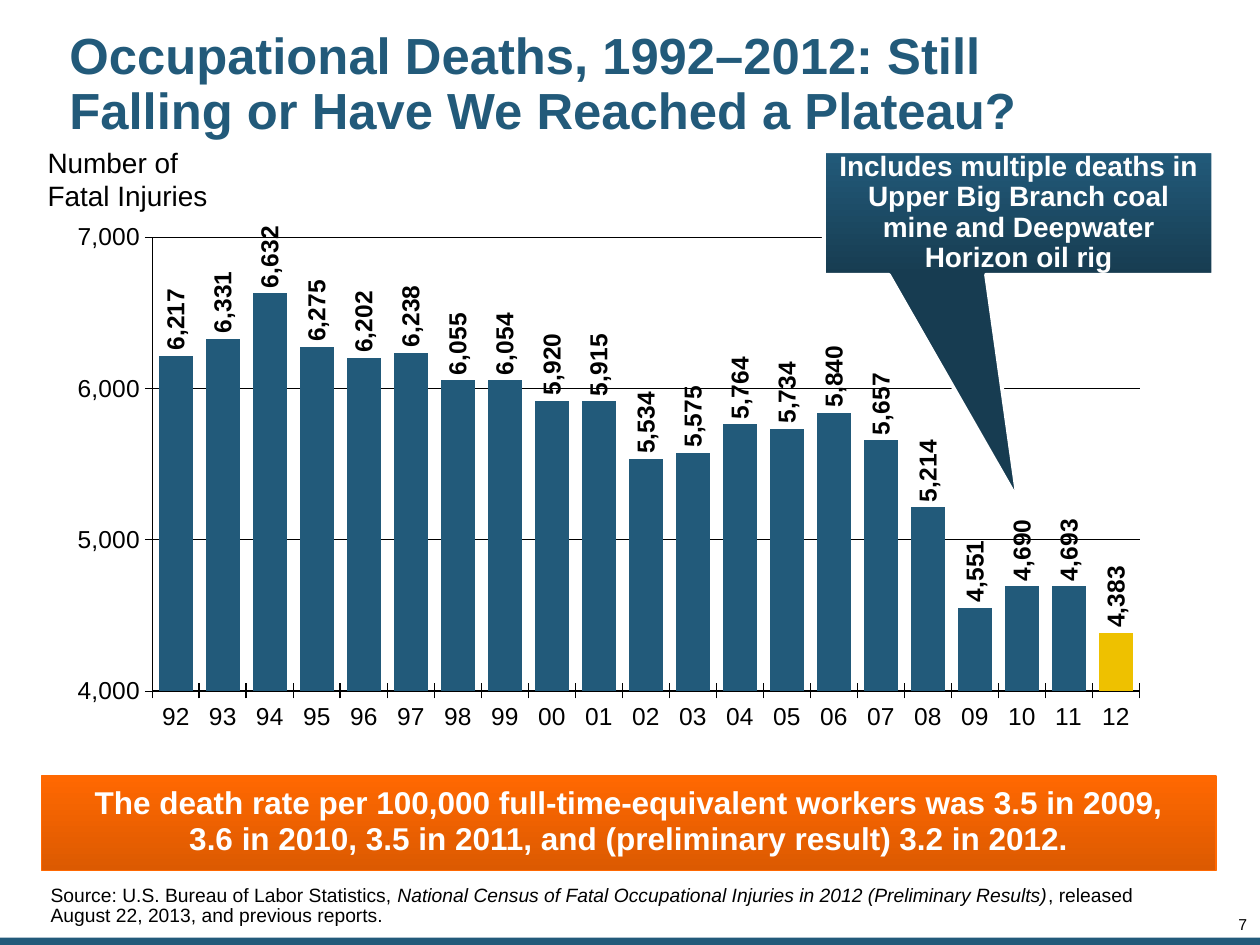
from lxml import etree
from pptx import Presentation, util as u
from pptx.chart.data import CategoryChartData
from pptx.dml.color import RGBColor
from pptx.enum import chart as charts, shapes, text
from pptx.oxml import ns

COLOURS = {
    "blue": "225A7A",
    "navy": "173C51",
    "orange": "FF6801",
    "rust": "DC5A01",
    "gold": "EEC100",
    "black": "000000",
    "white": "FFFFFF",
}
DEATHS = [6217, 6331, 6632, 6275, 6202, 6238, 6055, 6054, 5920, 5915, 5534,
          5575, 5764, 5734, 5840, 5657, 5214, 4551, 4690, 4693, 4383]
PLOT_AREA = {"x": 0.083, "y": 0.097, "w": 0.917, "h": 0.786}
CENTRE = text.PP_ALIGN.CENTER
MIDDLE = text.MSO_ANCHOR.MIDDLE
BOTTOM = text.MSO_ANCHOR.BOTTOM


def colour(name):
    """Return the named colour."""
    return RGBColor.from_string(COLOURS[name])


def lengths(*values):
    """Turn centimetres into lengths."""
    return [u.Cm(value) for value in values]


def set_values(target, values):
    """Set each attribute of the target from a dict."""
    for name, value in values.items():
        setattr(target, name, value)


def format_font(font, size, name="black", **values):
    """Apply the slide's typeface with a size, colour and style."""
    set_values(font, {"name": "Arial", "size": u.Pt(size), **values})
    font.color.rgb = colour(name)


def write(shape, lines, size, name="black", bold=False, margins=(0.25, 0.13, 0.25, 0.13),
          anchor=text.MSO_ANCHOR.TOP, **paragraph_values):
    """Fill a shape with lines of (wording, italic) runs in one paragraph."""
    frame = shape.text_frame
    sides = ("margin_left", "margin_top", "margin_right", "margin_bottom")
    set_values(frame, dict(zip(sides, lengths(*margins))))
    set_values(frame, {"word_wrap": True, "vertical_anchor": anchor,
                       "auto_size": text.MSO_AUTO_SIZE.NONE})
    paragraph = frame.paragraphs[0]
    set_values(paragraph, {"space_before": u.Pt(0), **paragraph_values})
    for index, line in enumerate(lines):
        if index:
            paragraph.add_line_break()
        for wording, italic in line:
            run = paragraph.add_run()
            run.text = wording
            format_font(run.font, size, name, bold=bold, italic=italic)


def add_panel(slide, box, kind, start, end, line, width):
    """Add a shape shaded downwards from one colour to another."""
    shape = slide.shapes.add_shape(kind, *lengths(*box))
    shape.shadow.inherit = False
    shape.fill.gradient()
    shape.fill.gradient_angle = 270
    for stop, name in zip(shape.fill.gradient_stops, (start, end)):
        stop.color.rgb = colour(name)
    shape.line.color.rgb = colour(line)
    shape.line.width = u.Pt(width)
    return shape


def add_title(slide, box):
    """Place the title placeholder and write the headline."""
    title = slide.shapes.title
    set_values(title, dict(zip(("left", "top", "width", "height"), lengths(*box))))
    wording = "Occupational Deaths, 1992–2012: Still Falling or Have We Reached a Plateau?"
    write(title, [[(wording, False)]], 29, "blue", True, (0.13,) * 4, MIDDLE,
          line_spacing=0.9, alignment=text.PP_ALIGN.LEFT)


def format_axis(axis, width):
    """Give an axis its text, line and crossing tick marks."""
    format_font(axis.tick_labels.font, 14, bold=False)
    axis.format.line.color.rgb = colour("black")
    axis.format.line.width = u.Pt(width)
    axis.major_tick_mark = charts.XL_TICK_MARK.CROSS


def set_plot_area(chart):
    """Fix the inner plot area as fractions of the chart."""
    area = chart.element.xpath("c:chart/c:plotArea")[0]
    for old in area.xpath("c:layout"):
        area.remove(old)
    layout = etree.Element(ns.qn("c:layout"))
    manual = etree.SubElement(layout, ns.qn("c:manualLayout"))
    settings = {"layoutTarget": "inner", "xMode": "edge", "yMode": "edge", **PLOT_AREA}
    for name, value in settings.items():
        etree.SubElement(manual, ns.qn(f"c:{name}")).set("val", str(value))
    area.insert(0, layout)


def add_deaths_chart(slide, box):
    """Add the column chart of yearly deaths with its axis heading."""
    data = CategoryChartData(number_format="#,##0")
    data.categories = [f"{year % 100:02d}" for year in range(1992, 2013)]
    data.add_series("Series 1", DEATHS)
    chart = slide.shapes.add_chart(
        charts.XL_CHART_TYPE.COLUMN_CLUSTERED, *lengths(*box), data).chart
    set_values(chart, {"has_legend": False, "has_title": False})
    format_font(chart.font, 14)
    set_plot_area(chart)
    set_values(chart.plots[0], {"gap_width": 40, "vary_by_categories": False})

    format_axis(chart.category_axis, 1)
    chart.category_axis.tick_label_position = charts.XL_TICK_LABEL_POSITION.LOW
    values = chart.value_axis
    format_axis(values, 0.25)
    set_values(values, {"minimum_scale": 4000, "maximum_scale": 7000, "major_unit": 1000})
    set_values(values.tick_labels,
               {"number_format": "#,##0", "number_format_is_linked": False})
    values.major_gridlines.format.line.color.rgb = colour("black")
    values.major_gridlines.format.line.width = u.Pt(0.25)

    series = chart.plots[0].series[0]
    last_column = series.points[len(DEATHS) - 1]
    for part, name in ((series, "blue"), (last_column, "gold")):
        part.format.fill.solid()
        part.format.fill.fore_color.rgb = colour(name)
    labels = series.data_labels
    set_values(labels, {"show_value": True, "number_format": "#,##0",
                        "number_format_is_linked": False,
                        "position": charts.XL_LABEL_POSITION.OUTSIDE_END})
    format_font(labels.font, 14, bold=True)
    body = labels._element.xpath("c:txPr/a:bodyPr")[0]
    body.set("rot", "-5400000")
    body.set("vert", "horz")

    left, top = box[:2]
    heading = slide.shapes.add_textbox(*lengths(left - 0.56, top - 0.86, 4.27, 1.63))
    write(heading, [[("Number of Fatal Injuries", False)]], 16)


def add_callout(slide, box):
    """Add the callout that points at the 2010 column."""
    callout = add_panel(slide, box, shapes.MSO_SHAPE.RECTANGULAR_CALLOUT,
                        "blue", "navy", "white", 2.25)
    callout.adjustments[0] = -0.002
    callout.adjustments[1] = 2.326
    wording = "Includes multiple deaths in Upper Big Branch coal mine and Deepwater Horizon oil rig"
    write(callout, [[(wording, False)]], 16, "white", True, (0.25,) * 4, MIDDLE,
          line_spacing=0.9, alignment=CENTRE)


def add_rate_banner(slide, box):
    """Add the orange banner with the death rates."""
    banner = add_panel(slide, box, shapes.MSO_SHAPE.RECTANGLE,
                       "orange", "rust", "orange", 1)
    lines = ["The death rate per 100,000 full-time-equivalent workers was 3.5 in 2009,",
             "3.6 in 2010, 3.5 in 2011, and (preliminary result) 3.2 in 2012."]
    write(banner, [[(line, False)] for line in lines], 18, "white", True,
          (0.25, 0.13, 0.25, 0.18), MIDDLE, line_spacing=0.95, alignment=CENTRE)


def add_footer(slide, box):
    """Add the source, the page number and the bar along the bottom edge."""
    left, top, width, height = box
    bar = slide.shapes.add_shape(shapes.MSO_SHAPE.RECTANGLE,
                                 *lengths(left, top + height - 0.15, width, 0.15))
    bar.shadow.inherit = False
    bar.fill.solid()
    bar.fill.fore_color.rgb = colour("blue")
    bar.line.fill.background()
    source = slide.shapes.add_textbox(*lengths(left, top, width - 1.52, height))
    runs = [("Source: U.S. Bureau of Labor Statistics, ", False),
            ("National Census of Fatal Occupational Injuries in 2012 (Preliminary Results)", True),
            (", released August 22, 2013, and previous reports.", False)]
    write(source, [runs], 11, margins=(1.02, 0, 0, 0.38), anchor=BOTTOM, line_spacing=0.85)
    number = slide.shapes.add_textbox(*lengths(left + width - 1.5, top + 0.63, 1.24, 0.33))
    write(number, [[("7", False)]], 9, margins=(0,) * 4, line_spacing=0.85,
          alignment=text.PP_ALIGN.RIGHT)


def main():
    """Build the slide and save it."""
    presentation = Presentation()
    set_values(presentation, {"slide_width": u.Cm(25.4), "slide_height": u.Cm(19.05)})
    slide = presentation.slides.add_slide(presentation.slide_layouts[5])
    add_title(slide, (1.27, 0.53, 20.55, 2.39))
    add_deaths_chart(slide, (1.27, 3.66, 21.72, 11.63))
    add_footer(slide, (0, 17.86, 25.4, 1.19))
    add_rate_banner(slide, (0.84, 15.65, 23.67, 1.9))
    add_callout(slide, (16.61, 3.05, 7.85, 2.49))
    presentation.save("out.pptx")


if __name__ == "__main__":
    main()
